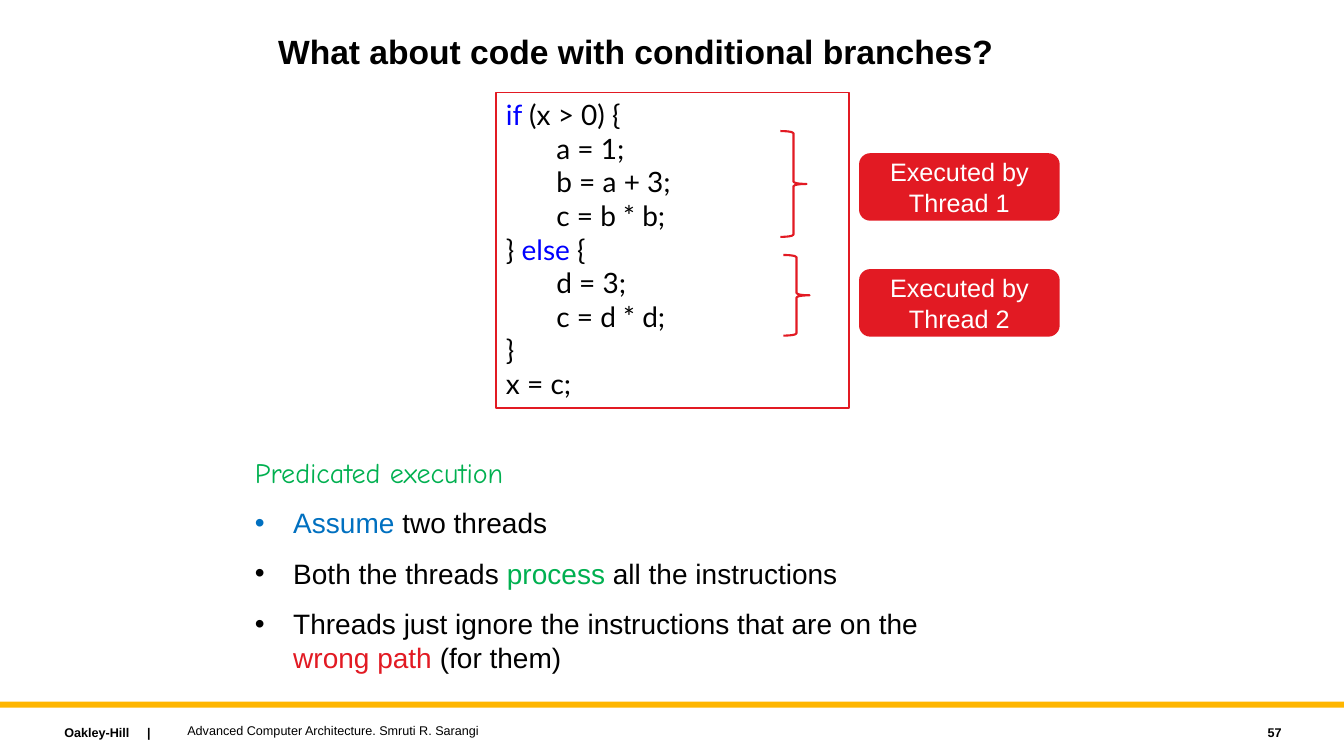
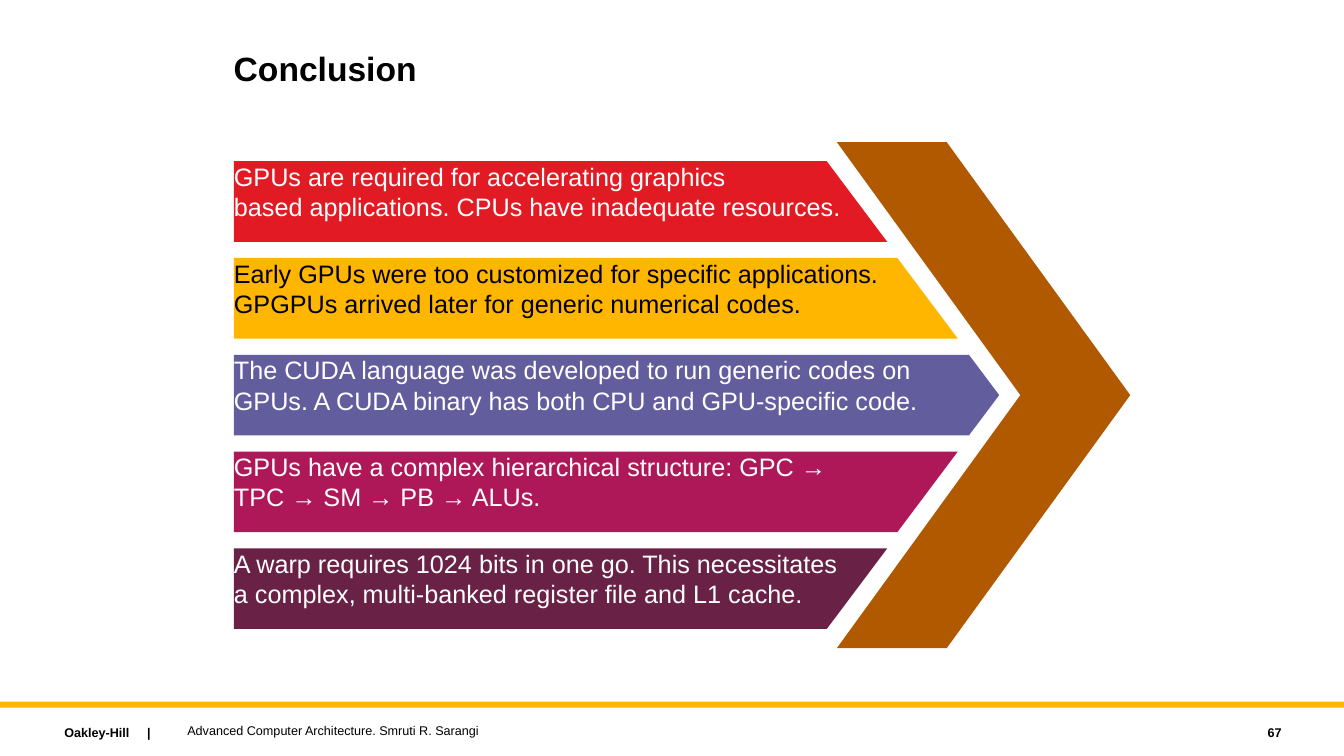
from lxml import etree
from pptx import Presentation
from pptx import util as u
from pptx.dml.color import RGBColor
from pptx.enum import shapes, text
from pptx.oxml.ns import qn

Inches = u.Inches
BLACK, WHITE = "000000", "FFFFFF"
RED, AMBER, GREEN = "E21A23", "FFB600", "00B050"
BLUE, KEYWORD = "0070C0", "0000FF"
VIOLET, MAGENTA, PLUM, BROWN = "625D9C", "AF1858", "692146", "B15900"

TITLE = dict(size=24, bold=True, line_spacing=0.9)
FOOTER = dict(size=9, anchor=text.MSO_ANCHOR.MIDDLE)


def paint(fill, color):
    """Make a shape, line or font fill solid in a hex colour."""
    fill.solid()
    fill.fore_color.rgb = RGBColor.from_string(color)


def write(shape, paragraphs, size=18, color=BLACK, font="Arial", bold=False,
          align=text.PP_ALIGN.LEFT, anchor=text.MSO_ANCHOR.TOP,
          inset=None, line_spacing=None, gap=None):
    """Fill a shape with paragraphs, each a list of strings or (string, colour)."""
    frame = shape.text_frame
    frame.word_wrap = True
    frame.vertical_anchor = anchor
    if inset is not None:
        frame.margin_left = frame.margin_right = Inches(inset)
        frame.margin_top = frame.margin_bottom = Inches(inset)
    for i, parts in enumerate(paragraphs):
        paragraph = frame.add_paragraph() if i else frame.paragraphs[0]
        paragraph.alignment = align
        if line_spacing:
            paragraph.line_spacing = line_spacing
        if gap and i:
            paragraph.space_before = u.Pt(gap)
        for part in parts:
            words, part_color = (part, color) if isinstance(part, str) else part
            run = paragraph.add_run()
            run.text = words
            run.font.size, run.font.name, run.font.bold = u.Pt(size), font, bold
            paint(run.font.fill, part_color)
    return frame


prs = Presentation()
prs.slide_width, prs.slide_height = Inches(13.33), Inches(7.5)

# Title, band and footer of every slide
pages = []
for heading, left, top, number in (
        ("What about code with conditional branches?", 2.66, 0.3, "57"),
        ("Conclusion", 2.22, 0.47, "67")):
    canvas = prs.slides.add_slide(prs.slide_layouts[6]).shapes
    pages.append(canvas)

    band = canvas.add_shape(shapes.MSO_SHAPE.RECTANGLE,
                            0, Inches(6.96), prs.slide_width, Inches(0.06))
    band.shadow.inherit = False
    paint(band.fill, AMBER)
    band.line.fill.background()

    title = canvas.add_textbox(Inches(left), Inches(top), Inches(7.5), Inches(0.9))
    write(title, [[heading]], **TITLE)

    publisher = canvas.add_textbox(Inches(0.54), Inches(7.14), Inches(2.27), Inches(0.25))
    mark = write(publisher, [["Oakley-Hill\t|"]], size=9, bold=True).paragraphs[0]
    tabs = etree.SubElement(mark._p.get_or_add_pPr(), qn("a:tabLst"))
    etree.SubElement(tabs, qn("a:tab"), pos=str(Inches(0.82)), algn="l")

    book = canvas.add_textbox(Inches(1.76), Inches(7.12), Inches(8), Inches(0.25))
    write(book, [["Advanced Computer Architecture. Smruti R. Sarangi"]], **FOOTER)

    page_number = canvas.add_textbox(Inches(11.41), Inches(7.14), Inches(1.4), Inches(0.25))
    write(page_number, [[number]], bold=True, align=text.PP_ALIGN.RIGHT, **FOOTER)

branches, conclusion = pages

# Conditional branches: explanation
explanation = branches.add_textbox(Inches(2.43), Inches(4.47), Inches(7.5), Inches(2.4))
points = write(explanation, [
    [("Predicated execution", GREEN)],
    [("Assume", BLUE), " two threads"],
    ["Both the threads ", ("process", GREEN), " all the instructions"],
    ["Threads just ignore the instructions that are on the ",
     ("wrong path ", RED), "(for them)"],
], size=20, gap=12).paragraphs
points[0].runs[0].font.name = "Comic Neue"
for point in points[1:]:
    properties = point._p.get_or_add_pPr()
    properties.set("marL", str(Inches(0.38)))
    properties.set("indent", str(-Inches(0.38)))
    etree.SubElement(properties, qn("a:buFont"), typeface="Arial")
    etree.SubElement(properties, qn("a:buChar"), char="•")

# Conditional branches: code and the thread that runs each branch
code = branches.add_shape(shapes.MSO_SHAPE.RECTANGLE,
                          Inches(4.92), Inches(0.92), Inches(3.5), Inches(3.13))
code.shadow.inherit = False
paint(code.fill, WHITE)
paint(code.line.fill, RED)
code.line.width = u.Pt(1)
write(code, [
    [("if ", KEYWORD), "(x > 0) {"],
    ["\ta = 1;"],
    ["\tb = a + 3;"],
    ["\tc = b * b;"],
    ["} ", ("else ", KEYWORD), "{"],
    ["\td = 3;"],
    ["\tc = d * d;"],
    ["}"],
    ["x = c;"],
], size=20, font="Lato")

for thread, brace_left, brace_top, brace_height, label_top in (
        (1, 7.74, 1.3, 1.05, 1.52), (2, 7.77, 2.53, 0.8, 2.67)):
    brace = branches.add_shape(shapes.MSO_SHAPE.RIGHT_BRACE, Inches(brace_left),
                               Inches(brace_top), Inches(0.26), Inches(brace_height))
    brace.shadow.inherit = False
    brace.fill.background()
    paint(brace.line.fill, RED)
    brace.line.width = u.Pt(1.5)

    label = branches.add_shape(shapes.MSO_SHAPE.ROUNDED_RECTANGLE, Inches(8.52),
                               Inches(label_top), Inches(1.99), Inches(0.67))
    label.shadow.inherit = False
    paint(label.fill, RED)
    label.line.fill.background()
    write(label, [[f"Executed by Thread {thread}"]], color=WHITE,
          align=text.PP_ALIGN.CENTER, anchor=text.MSO_ANCHOR.MIDDLE)

# Conclusion: a chevron, and bars whose right ends follow it
BAR_LEFT, BAR_TOP, BAR_HEIGHT, BAR_STEP = 2.32, 1.6, 0.8, 0.96
chevron = [(8.3, 1.41), (10.12, 3.92), (8.3, 6.43),
           (9.39, 6.43), (11.21, 3.92), (9.39, 1.41)]
bars = [
    (RED, WHITE, (8.2, 8.8),
     "GPUs are required for accelerating graphics",
     "based applications. CPUs have inadequate resources."),
    (AMBER, BLACK, (8.9, 9.5),
     "Early GPUs were too customized for specific applications.",
     "GPGPUs arrived later for generic numerical codes."),
    (VIOLET, WHITE, (9.61, 9.91, 9.61),
     "The CUDA language was developed to run generic codes on",
     "GPUs. A CUDA binary has both CPU and GPU-specific code."),
    (MAGENTA, WHITE, (9.5, 8.9),
     "GPUs have a complex hierarchical structure: GPC →",
     "TPC → SM → PB → ALUs."),
    (PLUM, WHITE, (8.8, 8.2),
     "A warp requires 1024 bits in one go. This necessitates",
     "a complex, multi-banked register file and L1 cache."),
]
outlines = [(chevron, BROWN, WHITE, [])]
for row, (fill, ink, ends, *lines) in enumerate(bars):
    top = BAR_TOP + row * BAR_STEP
    right_end = [(x, top + BAR_HEIGHT * i / (len(ends) - 1)) for i, x in enumerate(ends)]
    corners = [(BAR_LEFT, top), *right_end, (BAR_LEFT, top + BAR_HEIGHT)]
    outlines.append((corners, fill, ink, lines))

for corners, fill, ink, lines in outlines:
    start, *rest = [(Inches(x), Inches(y)) for x, y in corners]
    builder = conclusion.build_freeform(*start)
    builder.add_line_segments(rest, close=True)
    arrow_part = builder.convert_to_shape()
    arrow_part.shadow.inherit = False
    paint(arrow_part.fill, fill)
    arrow_part.line.fill.background()
    if lines:
        write(arrow_part, [[line] for line in lines], color=ink, inset=0)

prs.save("out.pptx")
